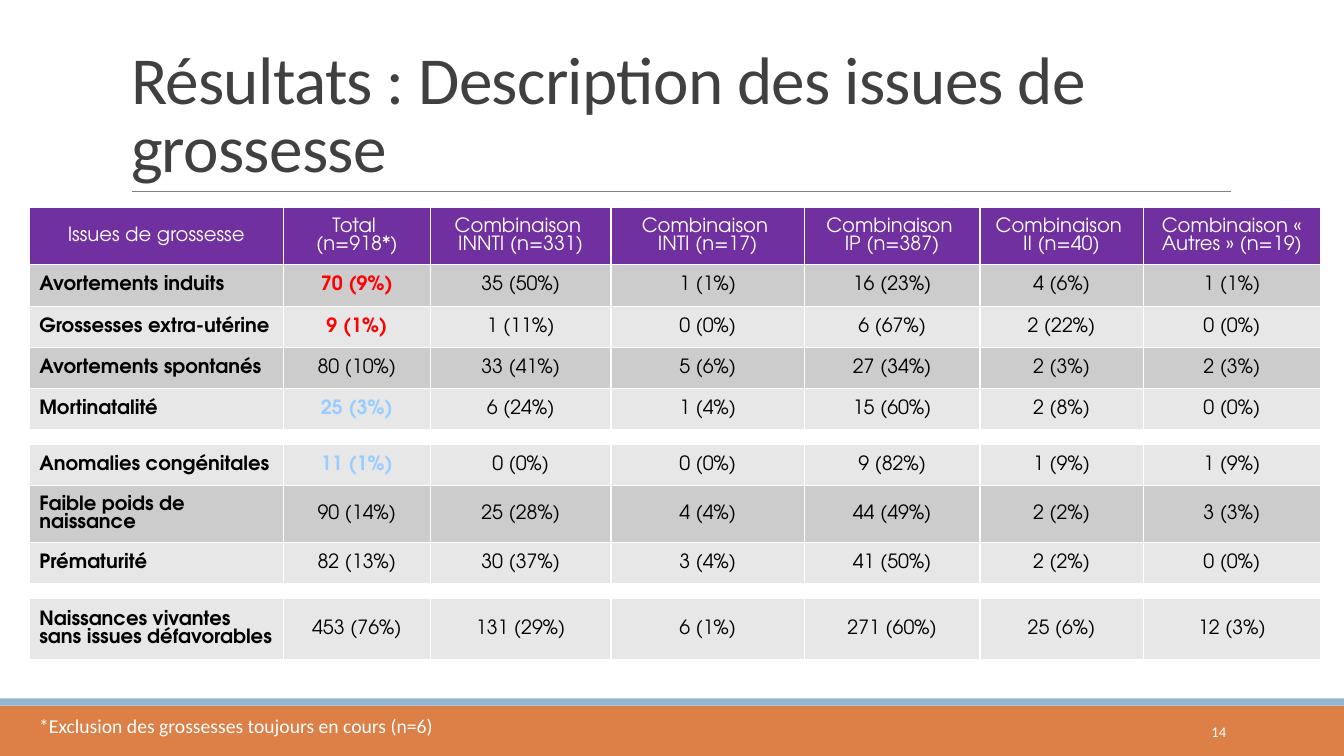
from collections import namedtuple

from lxml import etree
from pptx import Presentation
from pptx import util as u
from pptx.dml.color import RGBColor
from pptx.enum import shapes, text
from pptx.oxml import ns

Box = namedtuple("Box", "left top width height")

COLORS = {
    "white": "FFFFFF", "black": "000000", "title": "404040", "rule": "808080",
    "orange": "DD8047", "blue": "94B6D2", "purple": "7030A0",
    "dark_band": "CCCCCC", "light_band": "E7E7E7",
    "red": "FF0000", "sky": "99CCFF",
}
TITLE_FONT = "Calibri"
TABLE_FONT = "TeX Gyre Adventor"
COLUMN_WIDTHS = [2.52, 1.46, 1.79, 1.92, 1.74, 1.62, 1.76]
HEADER_HEIGHT, ROW_HEIGHT, GAP_HEIGHT, LAST_HEIGHT = 0.49, 0.41, 0.14, 0.61

HEADERS = [
    ["Issues de grossesse"],
    ["Total ", "(n=918*)"],
    ["Combinaison ", "INNTI (n=331)"],
    ["Combinaison ", "INTI (n=17)"],
    ["Combinaison ", "IP (n=387)"],
    ["Combinaison ", "II (n=40)"],
    ["Combinaison « Autres » (n=19)"],
]
OUTCOMES = [
    ["Avortements induits", "70 (9%)", "35 (50%)", "1 (1%)", "16 (23%)", "4 (6%)", "1 (1%)"],
    ["Grossesses extra-utérine", "9 (1%)", "1 (11%)", "0 (0%)", "6 (67%)", "2 (22%)", "0 (0%)"],
    ["Avortements spontanés", "80 (10%)", "33 (41%)", "5 (6%)", "27 (34%)", "2 (3%)", "2 (3%)"],
    ["Mortinatalité", "25 (3%)", "6 (24%)", "1 (4%)", "15 (60%)", "2 (8%)", "0 (0%)"],
    None,
    ["Anomalies congénitales", "11 (1%)", "0 (0%)", "0 (0%)", "9 (82%)", "1 (9%)", "1 (9%)"],
    ["Faible poids de naissance", "90 (14%)", "25 (28%)", "4 (4%)", "44 (49%)", "2 (2%)", "3 (3%)"],
    ["Prématurité", "82 (13%)", "30 (37%)", "3 (4%)", "41 (50%)", "2 (2%)", "0 (0%)"],
    None,
    ["Naissances vivantes sans issues défavorables", "453 (76%)", "131 (29%)", "6 (1%)",
     "271 (60%)", "25 (6%)", "12 (3%)"],
]
TOTAL_HIGHLIGHTS = {
    "Avortements induits": "red", "Grossesses extra-utérine": "red",
    "Mortinatalité": "sky", "Anomalies congénitales": "sky",
}


def rgb(name):
    return RGBColor.from_string(COLORS[name])


def inches(box):
    return [u.Inches(length) for length in box]


def add_run(paragraph, words, font, size, color, bold=False):
    run = paragraph.add_run()
    run.text = words
    run.font.name = font
    run.font.size = u.Pt(size)
    run.font.bold = bold
    run.font.color.rgb = rgb(color)
    return run


def add_bar(slide, box, color):
    bar = slide.shapes.add_shape(shapes.MSO_SHAPE.RECTANGLE, *inches(box))
    bar.shadow.inherit = False
    bar.fill.solid()
    bar.fill.fore_color.rgb = rgb(color)
    bar.line.fill.background()


def add_label(slide, box, words, size, align, anchor):
    label = slide.shapes.add_textbox(*inches(box))
    frame = label.text_frame
    frame.word_wrap = True
    frame.vertical_anchor = anchor
    paragraph = frame.paragraphs[0]
    paragraph.alignment = align
    add_run(paragraph, words, TITLE_FONT, size, "white")


def add_title(slide, box):
    title = slide.shapes.title
    title.left, title.top, title.width, title.height = inches(box)
    frame = title.text_frame
    frame.word_wrap = True
    frame.auto_size = text.MSO_AUTO_SIZE.NONE
    frame.vertical_anchor = text.MSO_ANCHOR.BOTTOM
    paragraph = frame.paragraphs[0]
    paragraph.alignment = text.PP_ALIGN.LEFT
    paragraph.line_spacing = 0.85
    run = add_run(paragraph, "Résultats : Description des issues de grossesse",
                  TITLE_FONT, 48, "title")
    run.font._element.set("spc", "-50")

    bottom = u.Inches(box.top + box.height)
    rule = slide.shapes.add_connector(
        shapes.MSO_CONNECTOR.STRAIGHT, u.Inches(box.left + 0.11), bottom,
        u.Inches(box.left + box.width + 0.01), bottom)
    rule.line.color.rgb = rgb("rule")
    rule.line.width = u.Pt(0.5)
    etree.SubElement(rule._element.spPr, ns.qn("a:effectLst"))


def style_cell(cell, fill):
    properties = cell._tc.get_or_add_tcPr()
    for side in ("a:lnL", "a:lnR", "a:lnT", "a:lnB"):
        border = etree.SubElement(properties, ns.qn(side), w=str(u.Pt(1)))
        solid = etree.SubElement(border, ns.qn("a:solidFill"))
        etree.SubElement(solid, ns.qn("a:srgbClr"), val=COLORS["white"])
    cell.fill.solid()
    cell.fill.fore_color.rgb = rgb(fill)
    cell.vertical_anchor = text.MSO_ANCHOR.MIDDLE


def fill_cell(cell, lines, color, align, bold=False):
    frame = cell.text_frame
    for index, words in enumerate(lines):
        paragraph = frame.add_paragraph() if index else frame.paragraphs[0]
        paragraph.alignment = align
        add_run(paragraph, words, TABLE_FONT, 14, color, bold)


def shrink_gap(cell):
    cell.margin_top = cell.margin_bottom = 0
    paragraph = cell.text_frame.paragraphs[0]
    etree.SubElement(paragraph._p, ns.qn("a:endParaRPr"), sz="400")


def add_outcome_table(slide, box):
    frame = slide.shapes.add_table(len(OUTCOMES) + 1, len(HEADERS), *inches(box))
    table = frame.table
    for column, width in zip(table.columns, COLUMN_WIDTHS):
        column.width = u.Inches(width)

    table.rows[0].height = u.Inches(HEADER_HEIGHT)
    for cell, lines in zip(table.rows[0].cells, HEADERS):
        style_cell(cell, "purple")
        fill_cell(cell, lines, "white", text.PP_ALIGN.CENTER)

    for number, outcome in enumerate(OUTCOMES, 1):
        row = table.rows[number]
        if outcome is None:
            row.height = u.Inches(GAP_HEIGHT)
            for cell in row.cells:
                style_cell(cell, "white")
                shrink_gap(cell)
            continue
        row.height = u.Inches(LAST_HEIGHT if number == len(OUTCOMES) else ROW_HEIGHT)
        highlight = TOTAL_HIGHLIGHTS.get(outcome[0])
        for index, (cell, words) in enumerate(zip(row.cells, outcome)):
            marked = index == 1 and highlight
            style_cell(cell, "dark_band" if number % 2 else "light_band")
            fill_cell(cell, [words], highlight if marked else "black",
                      text.PP_ALIGN.CENTER if index else text.PP_ALIGN.LEFT,
                      bold=bool(index == 0 or marked))
    for cell in table.rows[len(OUTCOMES)].cells:
        cell.fill.fore_color.rgb = rgb("light_band")


def add_footer(slide, box):
    stripe = 0.07
    add_bar(slide, Box(box.left, box.top + stripe, box.width, box.height - stripe), "orange")
    add_bar(slide, Box(box.left, box.top, box.width, stripe), "blue")
    add_label(slide, Box(box.left + 0.29, box.top + 0.1, 10.29, 0.34),
              "*Exclusion des grossesses toujours en cours (n=6)", 14,
              text.PP_ALIGN.LEFT, text.MSO_ANCHOR.TOP)
    add_label(slide, Box(box.left + 10.83, box.top + 0.13, 1.43, 0.4), "14", 10.5,
              text.PP_ALIGN.RIGHT, text.MSO_ANCHOR.MIDDLE)


def main():
    presentation = Presentation()
    presentation.slide_width = u.Inches(13.33)
    presentation.slide_height = u.Inches(7.5)
    slide = presentation.slides.add_slide(presentation.slide_layouts[5])
    add_footer(slide, Box(0, 6.93, 13.33, 0.57))
    add_title(slide, Box(1.2, 0.31, 11, 1.59))
    add_outcome_table(slide, Box(0.29, 2.06, 12.82, 4.28))
    presentation.save("out.pptx")


if __name__ == "__main__":
    main()
